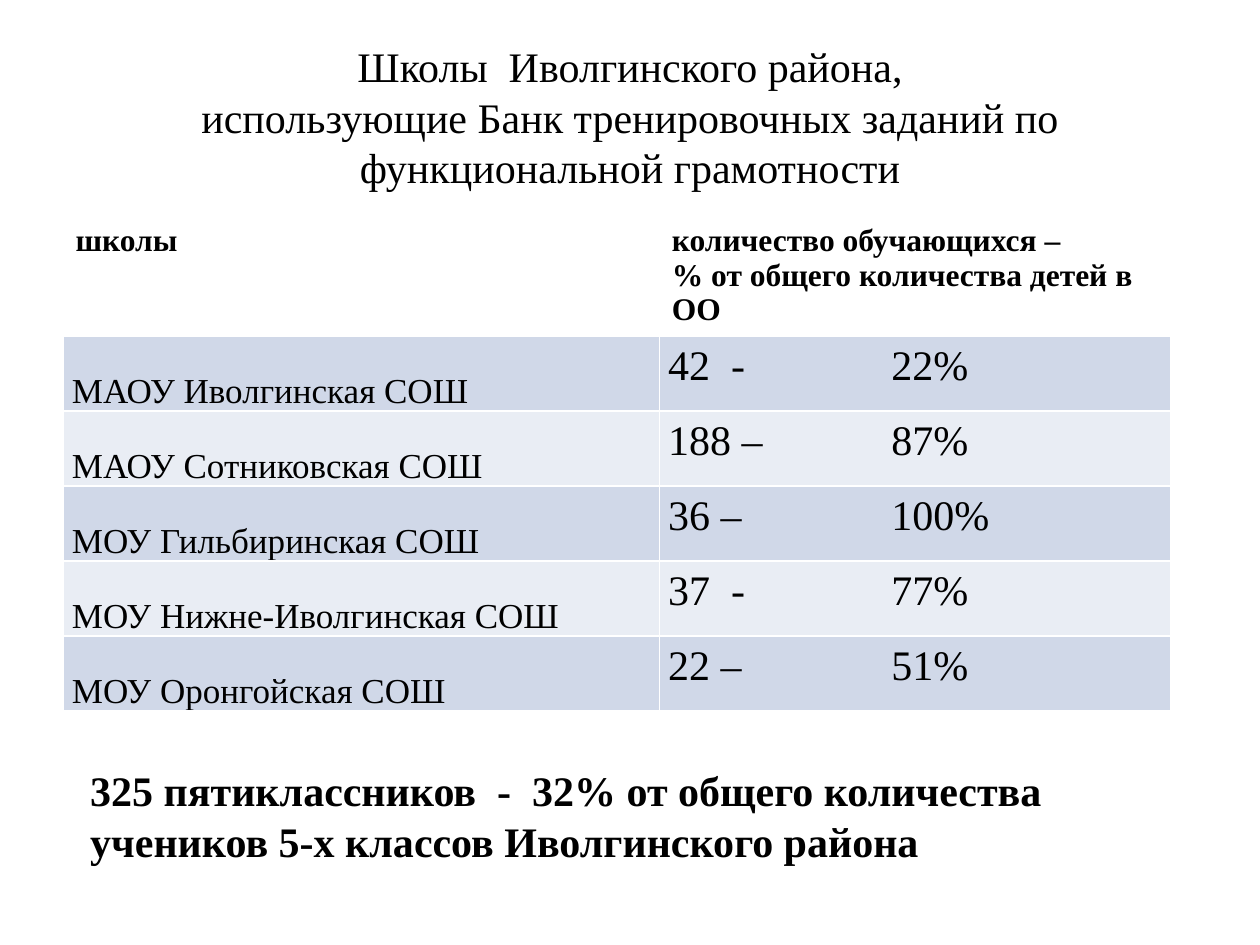
import pptx
import pptx.dml.color
import pptx.enum.text
import pptx.oxml.ns
import pptx.util
from dataclasses import dataclass
from lxml import etree
from pptx.util import Cm


@dataclass(frozen=True)
class Theme:
    font: str = "Times New Roman"
    ink: str = "000000"
    paper: str = "FFFFFF"
    bands: tuple = ("D0D8E8", "E9EDF4")
    large: int = 24
    medium: int = 20
    small: int = 18


theme = Theme()
anchors = pptx.enum.text.MSO_ANCHOR


def style(paragraph, size, bold=False):
    paragraph.font.name = theme.font
    paragraph.font.size = pptx.util.Pt(size)
    paragraph.font.bold = bold
    paragraph.font.color.rgb = pptx.dml.color.RGBColor.from_string(theme.ink)


def fill_cell(cell, text, color):
    cell.text = text
    cell.fill.solid()
    cell.fill.fore_color.rgb = pptx.dml.color.RGBColor.from_string(color)


deck = pptx.Presentation()
deck.slide_width, deck.slide_height = Cm(25.4), Cm(19.05)
page = deck.slides.add_slide(deck.slide_layouts[5])

# Title
title = page.shapes.title
title.left, title.top, title.width, title.height = Cm(1.27), Cm(0.76), Cm(22.86), Cm(3.18)
title.text_frame.text = (
    "Школы  Иволгинского района,\v"
    "использующие Банк тренировочных заданий по функциональной грамотности"
)
title.text_frame.vertical_anchor = anchors.MIDDLE
title.text_frame.paragraphs[0].alignment = pptx.enum.text.PP_ALIGN.CENTER
style(title.text_frame.paragraphs[0], theme.large)

# Table of schools
headings = ("школы", "количество обучающихся –\n% от общего количества детей в ОО")
schools = (
    ("МАОУ Иволгинская СОШ", "42  -", "22%"),
    ("МАОУ Сотниковская СОШ", "188 –", "87%"),
    ("МОУ Гильбиринская СОШ", "36 –", "100%"),
    ("МОУ Нижне-Иволгинская СОШ", "37  -", "77%"),
    ("МОУ Оронгойская СОШ", "22 –", "51%"),
)
table = page.shapes.add_table(
    len(schools) + 1, 2, Cm(1.27), Cm(4.37), Cm(22.34), Cm(9.96)
).table
table.columns[0].width, table.columns[1].width = Cm(12.02), Cm(10.32)

table.rows[0].height = Cm(2.41)
for column, heading in enumerate(headings):
    cell = table.cell(0, column)
    fill_cell(cell, heading, theme.paper)
    for paragraph in cell.text_frame.paragraphs:
        style(paragraph, theme.small, bold=True)

for row, (school, pupils, share) in enumerate(schools, start=1):
    table.rows[row].height = Cm(1.51)
    band = theme.bands[(row - 1) % 2]
    name_cell, count_cell = table.cell(row, 0), table.cell(row, 1)
    fill_cell(name_cell, school, band)
    fill_cell(count_cell, f"{pupils}\t{share}", band)
    name_cell.vertical_anchor = anchors.BOTTOM

    # The shares line up at one tab stop
    properties = count_cell.text_frame.paragraphs[0]._p.get_or_add_pPr()
    tabs = etree.SubElement(properties, pptx.oxml.ns.qn("a:tabLst"))
    etree.SubElement(tabs, pptx.oxml.ns.qn("a:tab"), pos=str(Cm(4.5)), algn="l")

    for cell, size in ((name_cell, theme.medium), (count_cell, theme.large)):
        cell.margin_left = cell.margin_right = Cm(0.18)
        cell.margin_top = cell.margin_bottom = 0
        paragraph = cell.text_frame.paragraphs[0]
        paragraph.line_spacing = 1.15
        style(paragraph, size)

# Summary
summary = page.shapes.add_textbox(Cm(1.57), Cm(15.29), Cm(23.01), Cm(2.31))
summary.text_frame.word_wrap = True
summary.text_frame.text = (
    "325 пятиклассников  -  32% от общего количества "
    "учеников 5-х классов Иволгинского района"
)
style(summary.text_frame.paragraphs[0], theme.large, bold=True)

deck.save("out.pptx")
